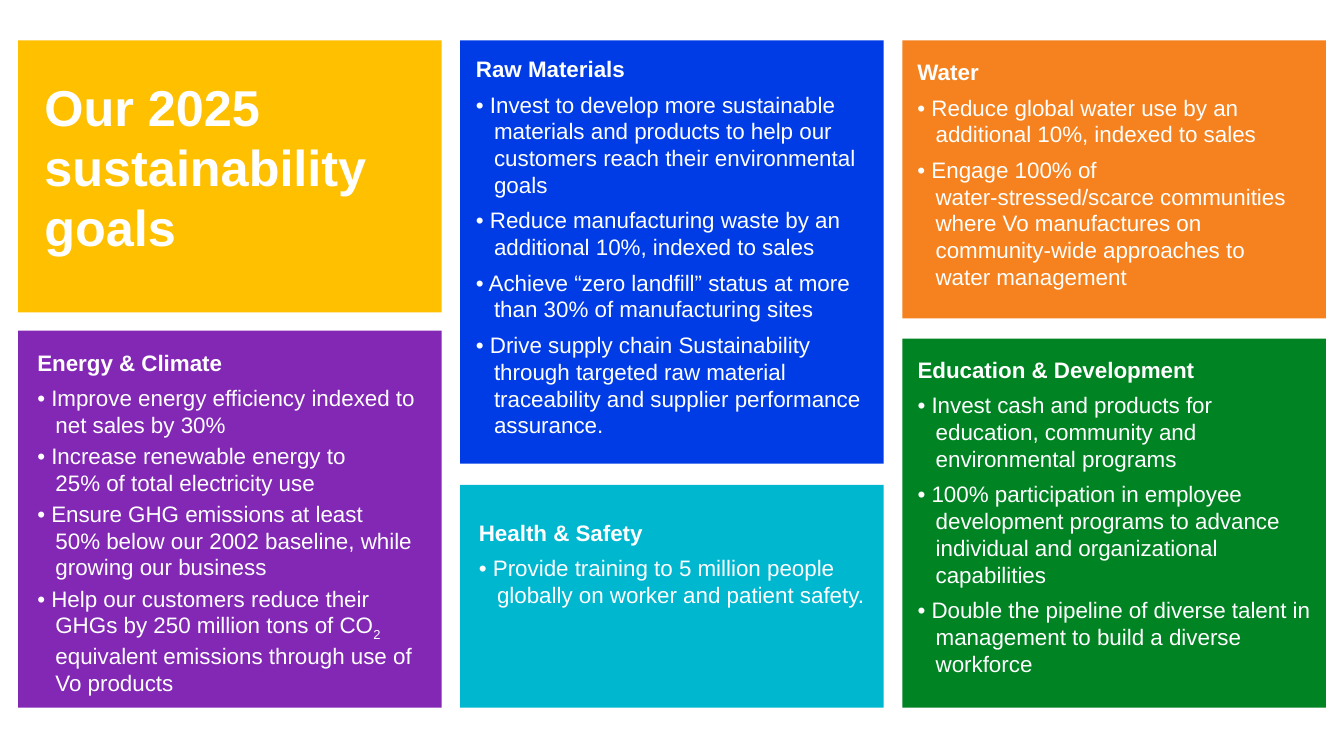
"""Build a slide of sustainability goals in six coloured panels."""
from pptx import Presentation
from pptx.dml.color import RGBColor as Rgb
from pptx.enum.shapes import MSO_SHAPE as Shape
from pptx.enum.text import MSO_AUTO_SIZE as Fit
from pptx.util import Inches, Pt

COLORS = {
    "gold": "FFC000", "blue": "003CE6", "orange": "F5821E",
    "purple": "8228B4", "cyan": "00B7D0", "green": "008423",
    "white": "FFFFFF",
}
TITLE = "Our 2025 sustainability goals"
RAW = [
    "Invest to develop more sustainable materials and products to help our "
    "customers reach their environmental goals",
    "Reduce manufacturing waste by an additional 10%, indexed to sales",
    "Achieve “zero landfill” status at more than 30% of manufacturing sites",
    "Drive supply chain Sustainability through targeted raw material "
    "traceability and supplier performance assurance.",
]
WATER = [
    "Reduce global water use by an additional 10%, indexed to sales",
    "Engage 100% of water-stressed/scarce communities where Vo manufactures "
    "on community-wide approaches to water management",
]
ENERGY = [
    "Improve energy efficiency indexed to net sales by 30%",
    "Increase renewable energy to \v25% of total electricity use",
    "Ensure GHG emissions at least \v50% below our 2002 baseline, while "
    "growing our business",
    ("Help our customers reduce their GHGs by 250 million tons of CO", "2",
     " equivalent emissions through use of Vo products"),
]
HEALTH = [
    "Provide training to 5 million people globally on worker and patient "
    "safety.",
]
SCHOOL = [
    "Invest cash and products for education, community and environmental "
    "programs",
    "100% participation in employee development programs to advance "
    "individual and organizational capabilities",
    "Double the pipeline of diverse talent in management to build a diverse "
    "workforce",
]
COLUMNS = [
    [("gold", 2.7, (0.44, 0.75, 3.69, 1.82), None, [], 0),
     ("purple", 3.74, (0.37, 3.46, 3.76, 3.44), "Energy & Climate", ENERGY, 3)],
    [("blue", 4.2, (4.72, 0.55, 3.92, 3.92), "Raw Materials", RAW, 6),
     ("cyan", 2.21, (4.75, 5.15, 3.83, 1.16), "Health & Safety", HEALTH, 0)],
    [("orange", 2.76, (9.1, 0.58, 3.74, 2.32), "Water", WATER, 6),
     ("green", 3.66, (9.1, 3.53, 3.92, 3.21), "Education & Development",
      SCHOOL, 6)],
]
LEFT, STEP, WIDTH = 0.18, 4.385, 4.2
TOP, BOTTOM = 0.4, 7.02
INDENT = Inches(0.18)


def write(para, text, size=16, bold=False, after=0, hang=False):
    parts = (text,) if isinstance(text, str) else text
    para.space_after = Pt(after)
    if hang:
        props = para._p.get_or_add_pPr()
        props.set("marL", str(INDENT))
        props.set("indent", str(-INDENT))
        parts = ("• " + parts[0], *parts[1:])
    for place, part in enumerate(parts):
        for row, line in enumerate(part.split("\v")):
            if row:
                para.add_line_break()
            run = para.add_run()
            run.text = line
            font = run.font
            font.name, font.size, font.bold = "Arial", Pt(size), bold
            font.color.rgb = Rgb.from_string(COLORS["white"])
            if place % 2:
                font._element.set("baseline", "-25000")


def panel(slide, box, color):
    rect = slide.shapes.add_shape(Shape.RECTANGLE, *map(Inches, box))
    rect.shadow.inherit = False
    rect.fill.solid()
    rect.fill.fore_color.rgb = Rgb.from_string(COLORS[color])
    rect.line.fill.background()


def frame(slide, box):
    area = slide.shapes.add_textbox(*map(Inches, box)).text_frame
    area.word_wrap = True
    area.auto_size = Fit.SHAPE_TO_FIT_TEXT
    area.margin_left = area.margin_right = 0
    area.margin_top = area.margin_bottom = 0
    return area


def main():
    deck = Presentation()
    deck.slide_width, deck.slide_height = Inches(13.33), Inches(7.5)
    slide = deck.slides.add_slide(deck.slide_layouts[6])
    for col, cards in enumerate(COLUMNS):
        for row, (color, height, box, head, goals, gap) in enumerate(cards):
            top = BOTTOM - height if row else TOP
            panel(slide, (LEFT + col * STEP, top, WIDTH, height), color)
            area = frame(slide, box)
            first = area.paragraphs[0]
            if head:
                write(first, head, bold=True, after=6)
            else:
                write(first, TITLE, size=36, bold=True)
            for goal in goals:
                write(area.add_paragraph(), goal, after=gap, hang=True)
    deck.save("out.pptx")


if __name__ == "__main__":
    main()
